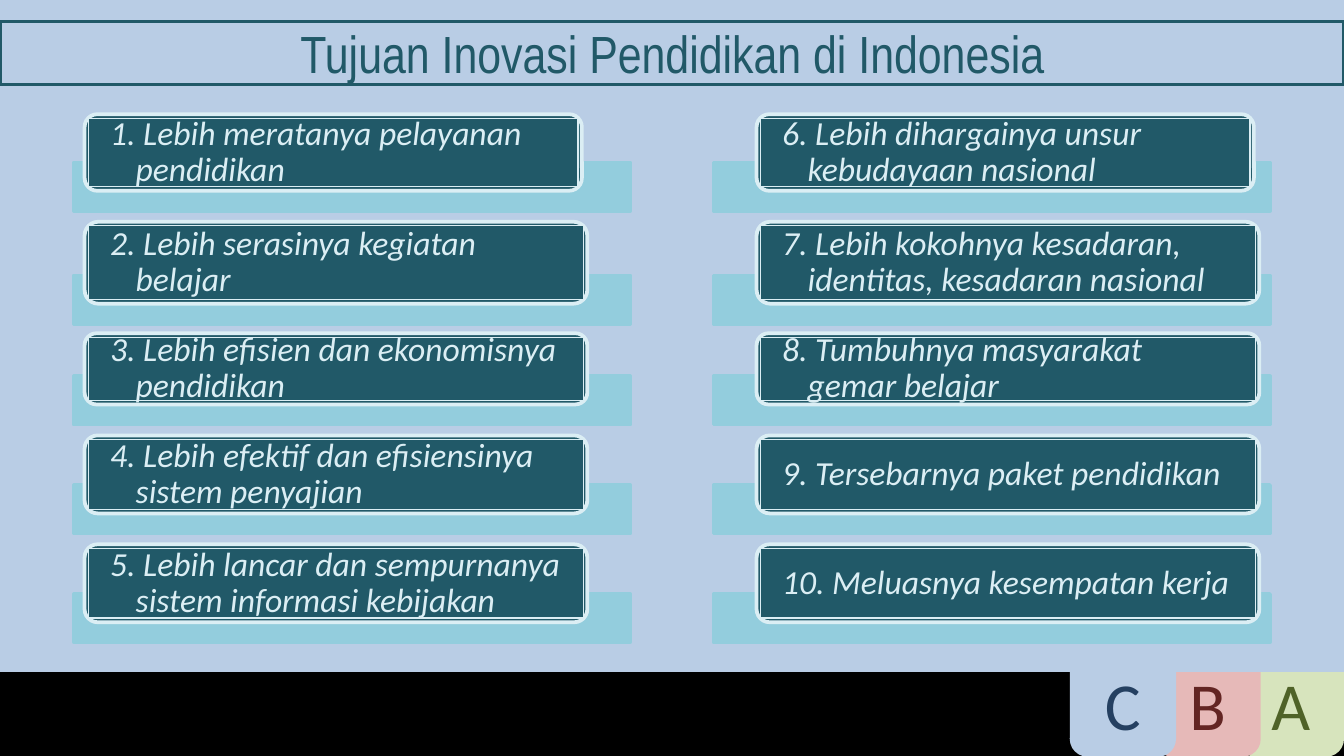
from pptx import Presentation
from pptx.dml.color import RGBColor
from pptx.enum.shapes import MSO_SHAPE
from pptx.enum.text import MSO_ANCHOR, MSO_AUTO_SIZE, PP_ALIGN
from pptx.util import Inches, Pt

TITLE = "Tujuan Inovasi Pendidikan di Indonesia"
GOALS = [
    [
        "1. Lebih meratanya pelayanan pendidikan",
        "2. Lebih serasinya kegiatan belajar",
        "3. Lebih efisien dan ekonomisnya pendidikan",
        "4. Lebih efektif dan efisiensinya sistem penyajian",
        "5. Lebih lancar dan sempurnanya sistem informasi kebijakan",
    ],
    [
        "6. Lebih dihargainya unsur kebudayaan nasional",
        "7. Lebih kokohnya kesadaran, identitas, kesadaran nasional",
        "8. Tumbuhnya masyarakat gemar belajar",
        "9. Tersebarnya paket pendidikan",
        "10. Meluasnya kesempatan kerja",
    ],
]
TABS = [
    ("A", 9.21, "green", "dark_green"),
    ("B", 8.59, "pink", "dark_red"),
    ("C", 7.96, "blue", "navy"),
]
COLORS = {
    "black": "000000",
    "blue": "B9CDE5",
    "navy": "254061",
    "pink": "E6B9B8",
    "dark_red": "632523",
    "green": "D7E4BD",
    "dark_green": "4F6228",
    "teal": "215968",
    "aqua": "93CDDD",
    "pale": "DBEEF4",
}
COLUMNS = [(0.55, 0.63), (5.31, 5.63)]
ROWS = [
    (0.85, 0.57, 3.7),
    (1.65, 0.61, 3.74),
    (2.48, 0.53, 3.74),
    (3.24, 0.58, 3.74),
    (4.05, 0.58, 3.74),
]
BAR_WIDTH, BAR_HEIGHT, BAR_OVERLAP = 4.14, 0.36, 0.21
FACE_MARGIN = 0.03
TAB_SIZE = 0.79


def color(name):
    return RGBColor.from_string(COLORS[name])


def add_box(shapes, kind, left, top, width, height, fill, line=None, weight=2):
    shape = shapes.add_shape(kind, Inches(left), Inches(top), Inches(width), Inches(height))
    shape.shadow.inherit = False
    shape.fill.solid()
    shape.fill.fore_color.rgb = color(fill)
    if line:
        shape.line.color.rgb = color(line)
        shape.line.width = Pt(weight)
    else:
        shape.line.fill.background()
    return shape


def write_text(shape, text, font="Calibri", size=18, ink="pale", italic=False,
               align=PP_ALIGN.CENTER, side=0.1, edge=0.05, hanging=0, spacing=1.0):
    frame = shape.text_frame
    frame.word_wrap = True
    frame.auto_size = MSO_AUTO_SIZE.NONE
    frame.vertical_anchor = MSO_ANCHOR.MIDDLE
    frame.margin_left = frame.margin_right = Inches(side)
    frame.margin_top = frame.margin_bottom = Inches(edge)
    frame.text = text
    paragraph = frame.paragraphs[0]
    paragraph.alignment = align
    paragraph.line_spacing = spacing
    if hanging:
        properties = paragraph._p.get_or_add_pPr()
        properties.set("marL", str(Inches(hanging)))
        properties.set("indent", str(-Inches(hanging)))
    run_font = paragraph.runs[0].font
    run_font.name = font
    run_font.size = Pt(size)
    run_font.italic = italic
    run_font.color.rgb = color(ink)


def add_goal(slide, text, bar_left, card_left, top, height, width):
    add_box(slide.shapes, MSO_SHAPE.RECTANGLE, bar_left, top + height - BAR_OVERLAP,
            BAR_WIDTH, BAR_HEIGHT, "aqua", "aqua")
    card = slide.shapes.add_group_shape().shapes
    add_box(card, MSO_SHAPE.ROUNDED_RECTANGLE, card_left, top, width, height, "teal", "pale")
    face = add_box(card, MSO_SHAPE.RECTANGLE, card_left + FACE_MARGIN, top + FACE_MARGIN,
                   width - 2 * FACE_MARGIN, height - 2 * FACE_MARGIN, "teal", "pale", 0.75)
    write_text(face, text, italic=True, align=PP_ALIGN.LEFT,
               side=0.16, edge=0, hanging=0.19, spacing=0.9)


def add_title(slide):
    title = slide.shapes.title
    title.left, title.top = Inches(0), Inches(0.16)
    title.width, title.height = Inches(10), Inches(0.47)
    title.line.color.rgb = color("teal")
    title.line.width = Pt(2)
    write_text(title, TITLE, font="Arial Narrow", size=28, ink="teal")
    title.element.getparent().append(title.element)


def main():
    presentation = Presentation()
    presentation.slide_width = Inches(10)
    presentation.slide_height = Inches(10 * 9 / 16)
    slide = presentation.slides.add_slide(presentation.slide_layouts[5])
    slide.background.fill.solid()
    slide.background.fill.fore_color.rgb = color("black")

    for letter, left, fill, ink in TABS:
        tab = add_box(slide.shapes, MSO_SHAPE.ROUNDED_RECTANGLE, left, 4.84,
                      TAB_SIZE, TAB_SIZE, fill)
        write_text(tab, letter, size=36, ink=ink)
    add_box(slide.shapes, MSO_SHAPE.RECTANGLE, 0, 0, 10, 5, "blue")

    for (bar_left, card_left), goals in zip(COLUMNS, GOALS):
        for text, (top, height, width) in zip(goals, ROWS):
            add_goal(slide, text, bar_left, card_left, top, height, width)
    add_title(slide)
    presentation.save("out.pptx")


if __name__ == "__main__":
    main()
